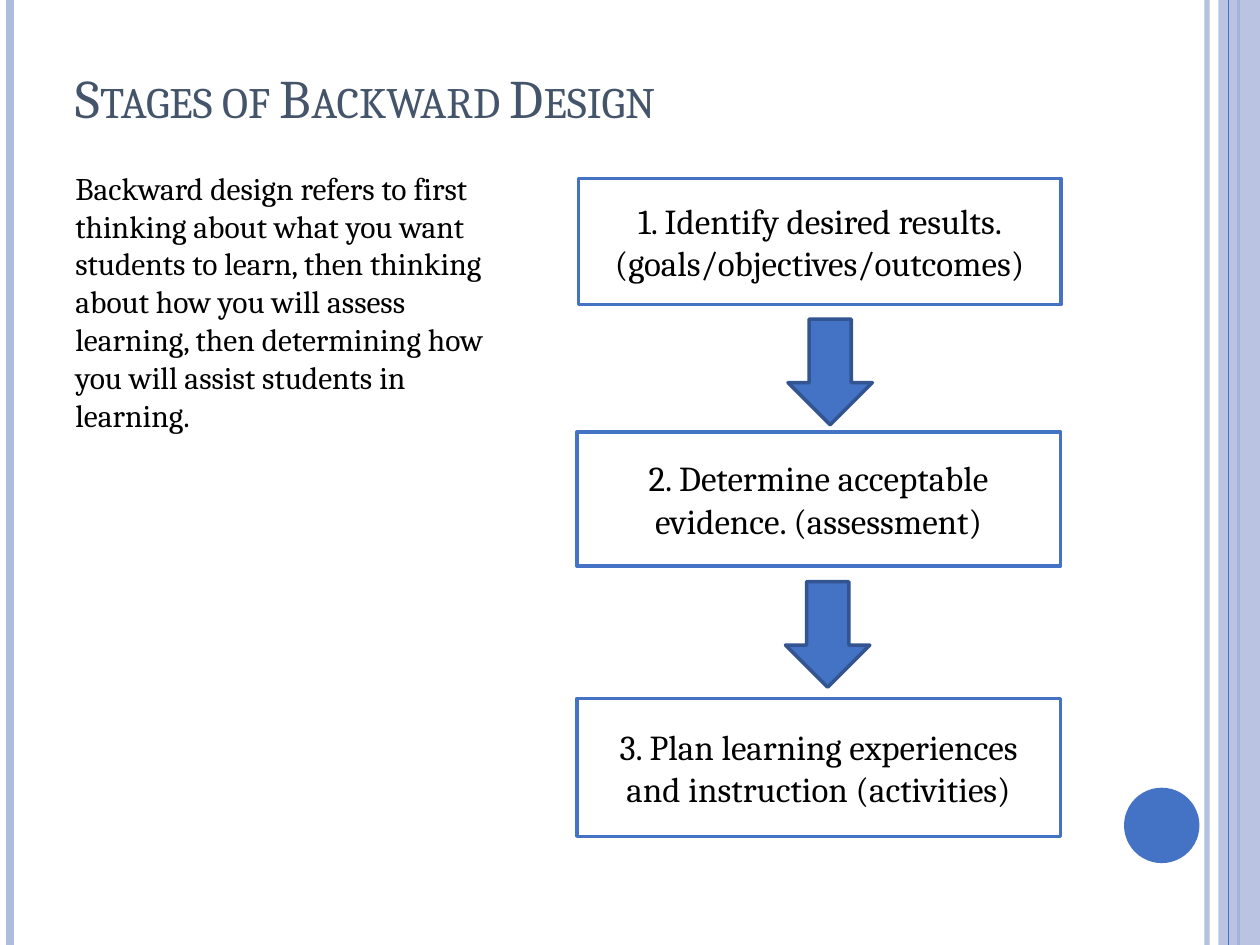
from lxml.etree import SubElement
from pptx import Presentation
from pptx.dml.color import RGBColor
from pptx.enum.shapes import MSO_CONNECTOR as LINK, MSO_SHAPE as SHAPE
from pptx.enum.text import MSO_ANCHOR as ANCHOR, MSO_AUTO_SIZE as FIT, PP_ALIGN as ALIGN
from pptx.oxml.ns import qn
from pptx.util import Cm, Pt

COLORS = {"white": "FFFFFF", "black": "000000", "blue": "4472C4",
          "pale": "B0BCDE", "dark": "325491", "slate": "44546A"}
FONT = "Cambria"
WIDTH, HEIGHT = 25.4, 19.05

# left, top, width, height in cm
STAGES = [
    ("1. Identify desired results. (goals/objectives/outcomes)", (11.66, 3.6, 9.73, 2.54)),
    ("2. Determine acceptable evidence. (assessment)", (11.63, 8.71, 9.75, 2.7)),
    ("3. Plan learning experiences and instruction (activities)", (11.63, 14.08, 9.75, 2.78)),
]
ARROWS = [(15.67, 6.65), (15.62, 11.94)]
INTRO = ("Backward design refers to first thinking about what you want students to learn, "
         "then thinking about how you will assess learning, then determining how you will "
         "assist students in learning.")


def color(name):
    return RGBColor.from_string(COLORS[name])


def set_alpha(fmt, percent):
    """Make a solid fill partly transparent."""
    tone = fmt._xPr.find(qn("a:solidFill"))[0]
    SubElement(tone, qn("a:alpha"), val=str(percent * 1000))


def write(frame, text, size, tone, align=ALIGN.LEFT):
    frame.word_wrap = True
    frame.text = text
    para = frame.paragraphs[0]
    para.alignment = align
    run = para.runs[0]
    run.font.name = FONT
    run.font.size = Pt(size)
    run.font.color.rgb = color(tone)
    return run


def add_rule(slide, x, tone, weight, alpha=100):
    """Draw a vertical line over the full height."""
    rule = slide.shapes.add_connector(LINK.STRAIGHT, Cm(x), 0, Cm(x), Cm(HEIGHT))
    rule.line.color.rgb = color(tone)
    rule.line.width = Pt(weight)
    if alpha < 100:
        set_alpha(rule.line.fill, alpha)
    SubElement(rule._element.spPr, qn("a:effectLst"))


def add_form(slide, kind, box, fill, edge=None):
    form = slide.shapes.add_shape(kind, *map(Cm, box))
    form.shadow.inherit = False
    form.fill.solid()
    form.fill.fore_color.rgb = color(fill)
    if edge:
        form.line.color.rgb = color(edge)
        form.line.width = Pt(2)
    else:
        form.line.fill.background()
    return form


def add_frame(slide):
    """Draw the border strips and the disc."""
    add_rule(slide, 24.33, "pale", 3, 93)
    add_rule(slide, 0.2, "pale", 4.5)
    add_rule(slide, 24.97, "blue", 1.5)
    band = add_form(slide, SHAPE.RECTANGLE, (24.56, 0, WIDTH - 24.56, HEIGHT), "pale")
    set_alpha(band.fill, 87)
    add_rule(slide, 24.77, "blue", 0.75)
    add_form(slide, SHAPE.OVAL, (22.66, 15.88, 1.52, 1.52), "blue")


def add_title(slide, text):
    title = slide.shapes.title
    title.left, title.top, title.width, title.height = map(Cm, (1.27, 0.76, 20.75, 1.98))
    frame = title.text_frame
    frame.auto_size = FIT.NONE
    frame.vertical_anchor = ANCHOR.BOTTOM
    run = write(frame, text, 31, "slate")
    run._r.get_or_add_rPr().set("cap", "small")


def add_stage(slide, text, box):
    stage = add_form(slide, SHAPE.RECTANGLE, box, "white", "blue")
    stage.text_frame.vertical_anchor = ANCHOR.MIDDLE
    write(stage.text_frame, text, 20, "black", ALIGN.CENTER)


def add_arrow(slide, left, top):
    arrow = add_form(slide, SHAPE.RIGHT_ARROW, (left, top, 2.13, 1.7), "blue", "dark")
    arrow.rotation = 90


def add_intro(slide, text):
    box = slide.shapes.add_textbox(*map(Cm, (1.27, 3.28, 8.89, 6.4)))
    write(box.text_frame, text, 18, "black")
    box.text_frame.auto_size = FIT.SHAPE_TO_FIT_TEXT


def main():
    deck = Presentation()
    deck.slide_width, deck.slide_height = Cm(WIDTH), Cm(HEIGHT)
    slide = deck.slides.add_slide(deck.slide_layouts[5])
    add_frame(slide)
    add_title(slide, "Stages of Backward Design")
    for text, box in STAGES:
        add_stage(slide, text, box)
    for left, top in ARROWS:
        add_arrow(slide, left, top)
    add_intro(slide, INTRO)
    deck.save("out.pptx")


if __name__ == "__main__":
    main()
